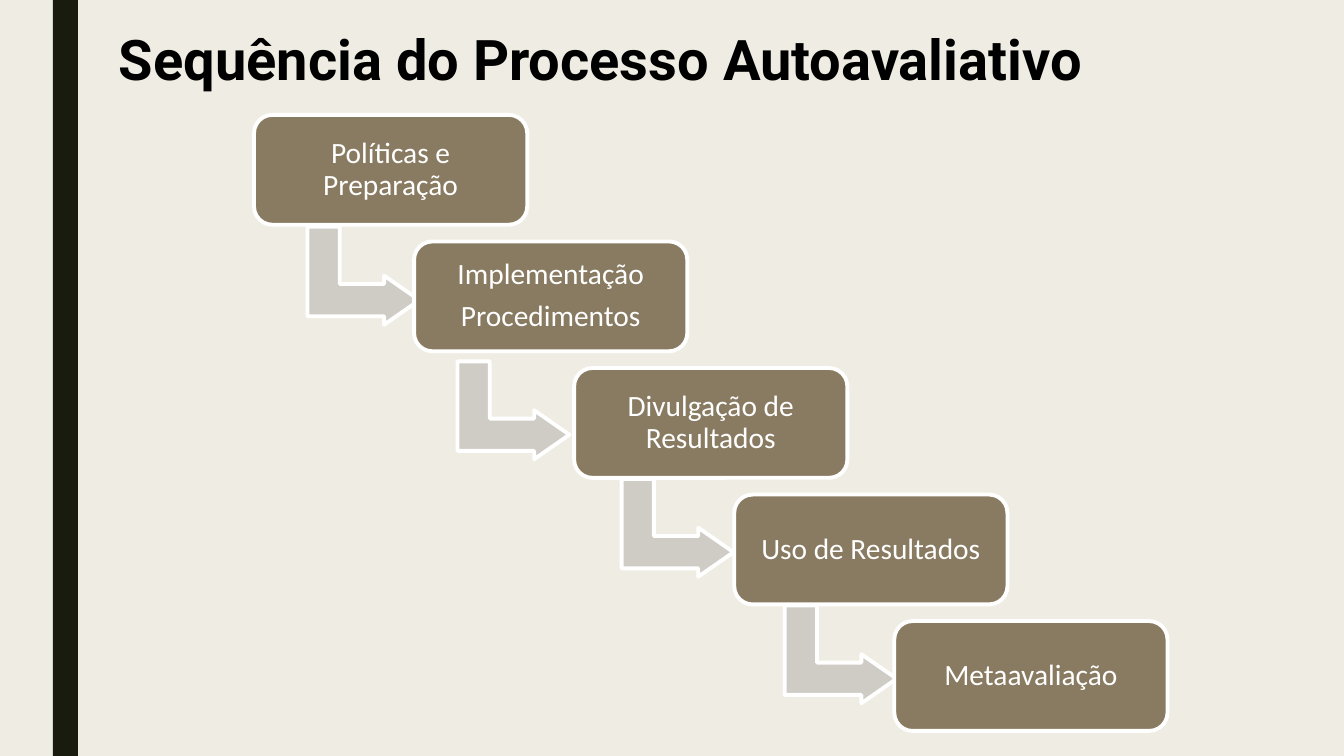
from pptx import Presentation
from pptx.dml.color import RGBColor
from pptx.enum.shapes import MSO_SHAPE
from pptx.enum.text import MSO_ANCHOR, MSO_AUTO_SIZE, PP_ALIGN
from pptx.util import Inches, Pt

RECTANGLE = MSO_SHAPE.RECTANGLE
ROUNDED = MSO_SHAPE.ROUNDED_RECTANGLE
BENT_ARROW = MSO_SHAPE.BENT_UP_ARROW
MIDDLE = MSO_ANCHOR.MIDDLE
NO_AUTOFIT = MSO_AUTO_SIZE.NONE
CENTER = PP_ALIGN.CENTER
LEFT = PP_ALIGN.LEFT

STEPS = [
    "Políticas e Preparação",
    "Implementação\nProcedimentos",
    "Divulgação de Resultados",
    "Uso de Resultados",
    "Metaavaliação",
]
ARROW_OFFSETS = [(4.5, 13.87), (3.75, 14.93), (4.05, 13.73), (4.28, 13.73)]
FIRST_LEFT, FIRST_TOP = 18.9, 15.2
STEP_RIGHT, STEP_DOWN = 11.91, 16.74


def color(value):
    return RGBColor.from_string(value)


class ProcessSlide:
    background = "EFEDE3"
    bar_fill = "191B0E"
    box_fill = "897B61"
    arrow_fill = "CFCBC5"
    outline = "FFFFFF"
    box_text = "FFFFFF"
    title_text = "000000"
    title_font = "Roboto"
    body_font = "Calibri"

    def __init__(self, presentation):
        self.width = presentation.slide_width
        self.height = presentation.slide_height
        self.slide = presentation.slides.add_slide(presentation.slide_layouts[5])
        fill = self.slide.background.fill
        fill.solid()
        fill.fore_color.rgb = color(self.background)

    def place(self, left, top, width, height):
        return (
            int(self.width * left / 100),
            int(self.height * top / 100),
            int(self.width * width / 100),
            int(self.height * height / 100),
        )

    def shape(self, kind, area, fill, outlined=True):
        shape = self.slide.shapes.add_shape(kind, *self.place(*area))
        shape.shadow.inherit = False
        shape.fill.solid()
        shape.fill.fore_color.rgb = color(fill)
        if outlined:
            shape.line.color.rgb = color(self.outline)
            shape.line.width = Pt(2.75)
        else:
            shape.line.fill.background()
        return shape

    def label(self, shape, text, font, size, text_color, alignment, bold=False):
        frame = shape.text_frame
        frame.text = text
        frame.word_wrap = True
        frame.auto_size = NO_AUTOFIT
        frame.vertical_anchor = MIDDLE
        for paragraph in frame.paragraphs:
            paragraph.alignment = alignment
            paragraph.line_spacing = 0.9
            for run in paragraph.runs:
                run.font.name = font
                run.font.size = Pt(size)
                run.font.bold = bold
                run.font.color.rgb = color(text_color)
        return frame

    def bar(self):
        self.shape(RECTANGLE, (3.93, 0, 1.87, 100), self.bar_fill, outlined=False)

    def arrow(self, left, top):
        arrow = self.shape(BENT_ARROW, (left, top, 7.28, 14.8), self.arrow_fill)
        arrow.rotation = 90
        for index, value in enumerate((0.33, 0.25, 0.36)):
            arrow.adjustments[index] = value

    def box(self, left, top, text):
        box = self.shape(ROUNDED, (left, top, 20.33, 14.53), self.box_fill)
        frame = self.label(box, text, self.body_font, 21, self.box_text, CENTER)
        frame.margin_left = frame.margin_right = Inches(0.09)
        frame.margin_top = frame.margin_bottom = Inches(0.09)
        for paragraph in frame.paragraphs:
            paragraph.space_after = Pt(7.35)

    def title(self, text):
        title = self.slide.shapes.title
        title.left, title.top, title.width, title.height = self.place(8.1, 2.8, 75.1, 11)
        self.label(title, text, self.title_font, 40, self.title_text, LEFT, bold=True)


def main():
    presentation = Presentation()
    presentation.slide_width = Inches(13.33)
    presentation.slide_height = Inches(7.5)
    process = ProcessSlide(presentation)
    process.bar()
    process.title("Sequência do Processo Autoavaliativo")
    for index, text in enumerate(STEPS):
        left = FIRST_LEFT + index * STEP_RIGHT
        top = FIRST_TOP + index * STEP_DOWN
        if index < len(ARROW_OFFSETS):
            right, down = ARROW_OFFSETS[index]
            process.arrow(left + right, top + down)
        process.box(left, top, text)
    presentation.save("out.pptx")


if __name__ == "__main__":
    main()
